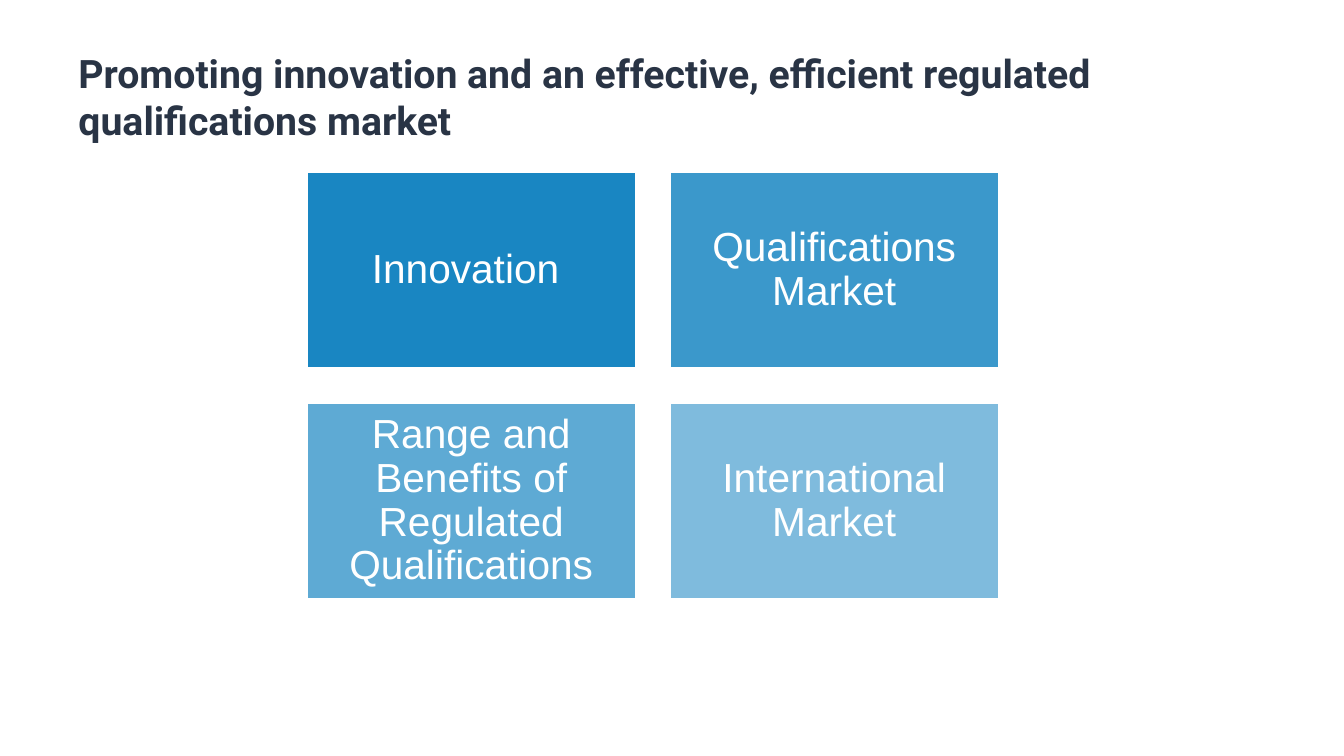
"""Build a slide with a title above a two by two grid of blue boxes."""
from lxml import etree
from pptx import Presentation
from pptx.dml.color import RGBColor
from pptx.enum.shapes import MSO_SHAPE as Shape
from pptx.enum.text import MSO_ANCHOR as Anchor, PP_ALIGN as Align
from pptx.oxml.ns import qn
from pptx.util import Pt

PX = 9144
WHITE, BLUE, NAVY = "FFFFFF", "0079BC", "293445"


def color(code):
    return RGBColor.from_string(code)


def write(box, text, font, size, ink, bold=False, align=Align.LEFT,
          anchor=Anchor.TOP, inset=(10, 5), lead=1.0):
    frame = box.text_frame
    frame.word_wrap = True
    frame.vertical_anchor = anchor
    frame.margin_left = frame.margin_right = inset[0] * PX
    frame.margin_top = frame.margin_bottom = inset[1] * PX
    para = frame.paragraphs[0]
    para.alignment = align
    para.line_spacing = lead
    run = para.add_run()
    run.text = text
    run.font.name = font
    run.font.size = Pt(size)
    run.font.bold = bold
    run.font.color.rgb = color(ink)


deck = Presentation()
deck.slide_width, deck.slide_height = 1333 * PX, 750 * PX
slide = deck.slides.add_slide(deck.slide_layouts[6])

LEFT, TOP, WIDE, HIGH, GAP = 304, 170, 327, 196, 33
topics = [
    ("Innovation ", 90),
    ("Qualifications Market", 77),
    ("Range and Benefits of Regulated Qualifications", 63),
    ("International Market", 50),
]
for i, (topic, alpha) in enumerate(topics):
    row, col = divmod(i, 2)
    x = LEFT + col * (WIDE + GAP)
    y = TOP + row * (HIGH + GAP)
    box = slide.shapes.add_shape(
        Shape.RECTANGLE, x * PX, y * PX, WIDE * PX, HIGH * PX)
    box.shadow.inherit = False
    box.fill.solid()
    box.fill.fore_color.rgb = color(BLUE)
    tint = box.fill._xPr.find(".//" + qn("a:srgbClr"))
    etree.SubElement(tint, qn("a:alpha"), val=str(alpha * 1000))
    box.line.color.rgb = color(WHITE)
    box.line.width = Pt(2)
    write(box, topic, "Arial", 29, WHITE, align=Align.CENTER,
          anchor=Anchor.MIDDLE, inset=(12, 12), lead=0.9)

title = slide.shapes.add_textbox(68 * PX, 44 * PX, 1213 * PX, 63 * PX)
write(title, "Promoting innovation and an effective, efficient regulated "
      "qualifications market", "Roboto", 28, NAVY, bold=True)

deck.save("out.pptx")
